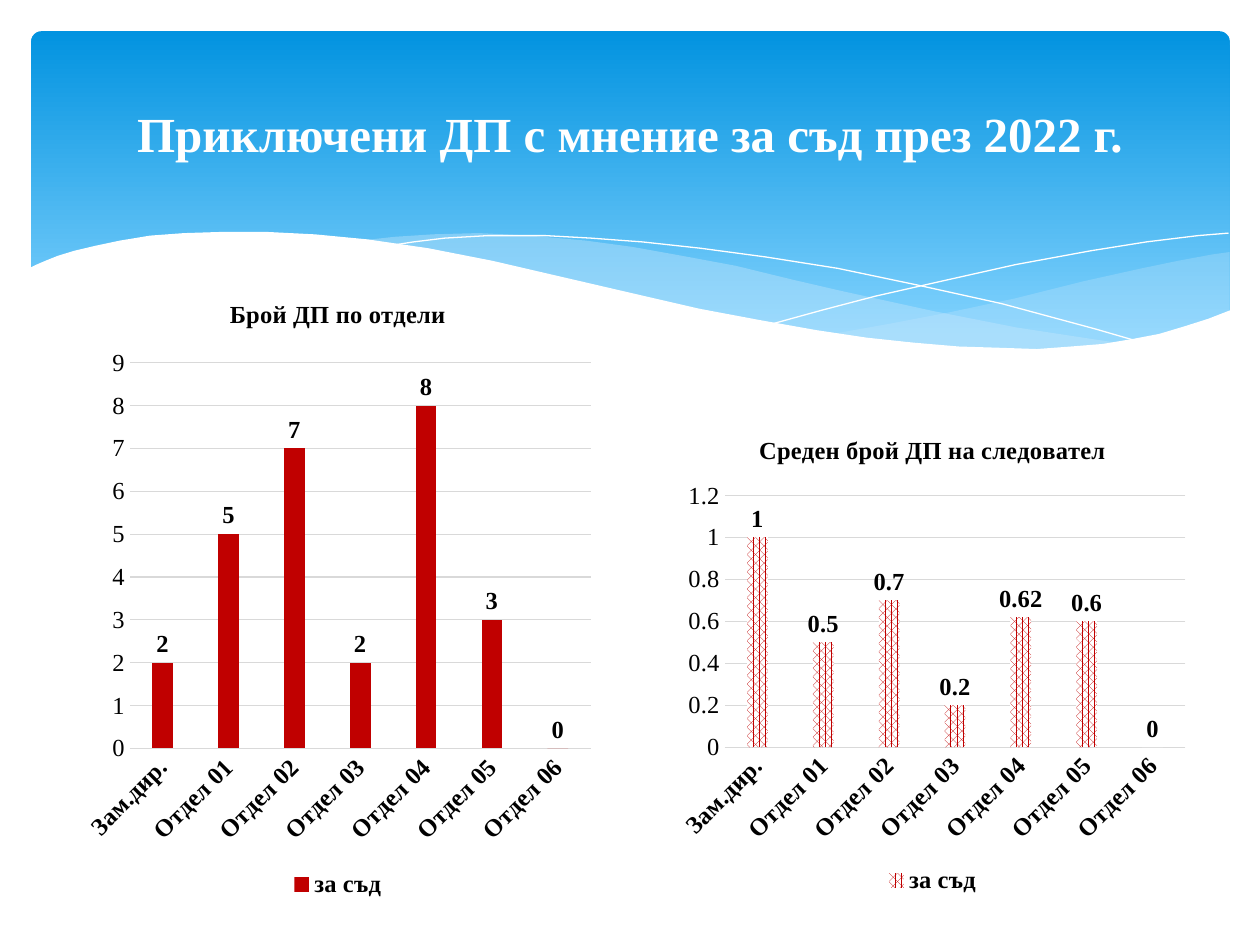
from lxml import etree
from pptx import Presentation, util as u
from pptx.chart.data import CategoryChartData
from pptx.dml.color import RGBColor
from pptx.enum import chart as ch, dml, shapes, text
from pptx.oxml.ns import qn

WHITE = RGBColor(0xFF, 0xFF, 0xFF)
BLACK = RGBColor(0, 0, 0)
SKY_DARK = RGBColor(0x02, 0x93, 0xE0)
SKY_LIGHT = RGBColor(0x83, 0xD3, 0xFE)
WAVE = RGBColor(0xC6, 0xE7, 0xFC)
GRID = RGBColor(0xD9, 0xD9, 0xD9)
RED = RGBColor(0xC0, 0x00, 0x00)
FONT = "Times New Roman"

# Wave outlines on a grid 1000 units wide across the slide
RIGHT_WAVE = [
    (976, 200), (962, 202), (935, 207), (906, 213), (861, 223), (805, 237),
    (753, 248), (706, 257), (661, 265), (691, 269), (719, 271), (745, 275),
    (781, 277), (814, 278), (854, 277), (889, 272), (921, 265), (949, 257),
    (976, 247)]
MIDDLE_WAVE = [
    (893, 273), (866, 269), (807, 260), (741, 247), (668, 231), (629, 222),
    (584, 211), (541, 203), (502, 196), (465, 191), (420, 187), (380, 185),
    (344, 186), (313, 188), (286, 191), (323, 196), (362, 203), (404, 211),
    (449, 222), (530, 240), (601, 255), (650, 264), (695, 270), (736, 275),
    (773, 277), (807, 278), (838, 278), (867, 276)]
FALLING_LINE = [
    (309, 195), (328, 192), (353, 189), (387, 187), (433, 187), (469, 189),
    (510, 192), (556, 197), (608, 204), (665, 213), (727, 226), (795, 241),
    (869, 261), (907, 272)]
RISING_LINE = [
    (613, 257), (653, 246), (695, 235), (748, 223), (806, 210), (866, 199),
    (910, 192), (951, 187), (975, 185)]
WHITE_WAVE = [
    (977, 246), (959, 253), (940, 259), (920, 265), (899, 269), (875, 273),
    (850, 275), (823, 277), (793, 276), (761, 275), (726, 272), (688, 268),
    (648, 262), (603, 254), (555, 245), (503, 233), (447, 220), (391, 207),
    (340, 197), (292, 190), (250, 186), (211, 184), (177, 184), (146, 185),
    (119, 187), (95, 191), (76, 195), (59, 199), (46, 203), (36, 207),
    (29, 210), (23, 213), (23, 329), (977, 329)]

DEPARTMENTS = ["Зам.дир."] + [f"Отдел {n:02d}" for n in range(1, 7)]


def wave(s, x, y, w, points, color=None, alpha=None):
    """Filled wave, or a thin white curve when no colour is given."""
    fb = s.shapes.build_freeform(*points[0], scale=w / 1000)
    fb.add_line_segments(points[1:], close=color is not None)
    sp = fb.convert_to_shape(x, y)
    sp.shadow.inherit = False
    if color is None:
        sp.fill.background()
        sp.line.color.rgb = WHITE
        sp.line.width = u.Pt(0)
        return
    sp.line.fill.background()
    sp.fill.solid()
    sp.fill.fore_color.rgb = color
    if alpha:
        clr = sp._element.spPr.find(qn("a:solidFill"))[0]
        etree.SubElement(clr, qn("a:alpha")).set("val", str(alpha * 1000))


def banner(s, x, y, w):
    """Blue gradient panel with waves along its lower edge."""
    sp = s.shapes.add_shape(shapes.MSO_SHAPE.ROUNDED_RECTANGLE,
                            x + u.Cm(0.63), y + u.Cm(0.63), u.Cm(24.16), u.Cm(6.86))
    sp.adjustments[0] = 0.03
    sp.shadow.inherit = False
    sp.line.fill.background()
    sp.fill.gradient()
    sp.fill.gradient_angle = 270
    stops = zip(sp.fill.gradient_stops, (SKY_DARK, SKY_LIGHT), (0, 0.9))
    for stop, color, position in stops:
        stop.color.rgb = color
        stop.position = position

    wave(s, x, y, w, RIGHT_WAVE, WAVE, 29)
    wave(s, x, y, w, MIDDLE_WAVE, WAVE, 40)
    wave(s, x, y, w, FALLING_LINE)
    wave(s, x, y, w, RISING_LINE)
    wave(s, x, y, w, WHITE_WAVE, WHITE)


def title(s, x, y, w, h, words):
    tf = s.shapes.add_textbox(x, y, w, h).text_frame
    tf.word_wrap = True
    tf.vertical_anchor = text.MSO_ANCHOR.MIDDLE
    p = tf.paragraphs[0]
    p.text = words
    p.alignment = text.PP_ALIGN.CENTER
    style(p.font, 28, True, WHITE)


def style(font, size, bold, color=BLACK):
    font.name = FONT
    font.size = u.Pt(size)
    font.bold = bold
    font.color.rgb = color


def column_chart(s, x, y, w, h, heading, values, patterned=False):
    data = CategoryChartData()
    data.categories = DEPARTMENTS
    data.add_series("за съд", values)
    chart = s.shapes.add_chart(ch.XL_CHART_TYPE.COLUMN_CLUSTERED,
                               x, y, w, h, data).chart
    style(chart.font, 10, False)

    # Heading and legend
    chart.has_title = True
    p = chart.chart_title.text_frame.paragraphs[0]
    p.text = heading
    style(p.font, 14, True)
    chart.chart_title.include_in_layout = False
    chart.has_legend = True
    chart.legend.position = ch.XL_LEGEND_POSITION.BOTTOM
    chart.legend.include_in_layout = False
    style(chart.legend.font, 14, True)

    # Axes
    cat, val = chart.category_axis, chart.value_axis
    for axis, bold in ((cat, True), (val, False)):
        axis.major_tick_mark = axis.minor_tick_mark = ch.XL_TICK_MARK.NONE
        style(axis.tick_labels.font, 14, bold)
    cat._element.find(qn("c:txPr")).find(qn("a:bodyPr")).set("rot", "-2700000")
    val.format.line.fill.background()
    for line in (cat.format.line, val.major_gridlines.format.line):
        line.color.rgb = GRID
        line.width = u.Pt(0.75)

    # Columns and their labels
    plot = chart.plots[0]
    plot.vary_by_categories = False
    plot.gap_width, plot.overlap = 219, -27
    fill = plot.series[0].format.fill
    if patterned:
        fill.patterned()
        fill.pattern = dml.MSO_PATTERN.PERCENT_70
        fill.back_color.rgb = WHITE
    else:
        fill.solid()
    fill.fore_color.rgb = RED
    plot.has_data_labels = True
    labels = plot.data_labels
    labels.show_value = True
    labels.position = ch.XL_LABEL_POSITION.OUTSIDE_END
    style(labels.font, 14, True)


def main():
    prs = Presentation()
    prs.slide_width, prs.slide_height = u.Cm(25.4), u.Cm(19.05)
    s = prs.slides.add_slide(prs.slide_layouts[6])
    banner(s, 0, 0, prs.slide_width)
    title(s, u.Cm(1.27), u.Cm(0.94), u.Cm(22.86), u.Cm(3.48),
          "Приключени ДП с мнение за съд през 2022 г.")
    column_chart(s, u.Cm(1.5), u.Cm(5.54), u.Cm(10.62), u.Cm(12.67),
                 "Брой ДП по отдели", (2, 5, 7, 2, 8, 3, 0))
    column_chart(s, u.Cm(13.49), u.Cm(8.33), u.Cm(10.62), u.Cm(9.8),
                 "Среден брой ДП на следовател",
                 (1, 0.5, 0.7, 0.2, 0.62, 0.6, 0), patterned=True)
    prs.save("out.pptx")


if __name__ == "__main__":
    main()
